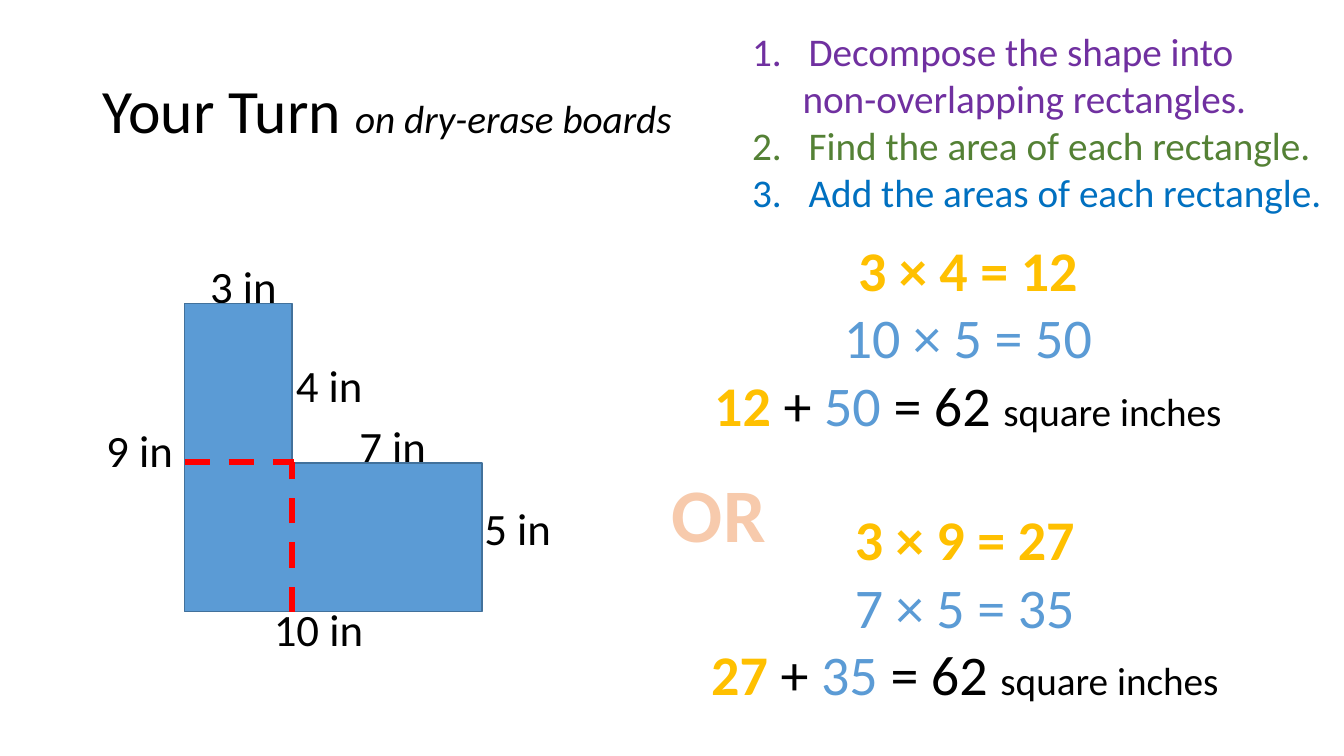
from lxml import etree
from pptx import Presentation
from pptx.dml.color import RGBColor
from pptx.enum import dml, shapes, text
from pptx.oxml import ns
from pptx.util import Inches, Pt

COLORS = {"black": "000000", "purple": "7030A0", "green": "548135", "blue": "0070C0",
          "gold": "FFC000", "sky": "5B9BD5", "outline": "42719B", "red": "FF0000",
          "peach": "F7CAAC"}
FONT = "Calibri"

TITLE = [("Your Turn ", {"size": 44}), ("on dry-erase boards", {"size": 28, "italic": True})]

# text, color, numbered
STEPS = [
    ("Decompose the shape into", "purple", True),
    ("non-overlapping rectangles.", "purple", False),
    ("Find the area of each rectangle.", "green", True),
    ("Add the areas of each rectangle.", "blue", True),
]

# text, left, top, width
SIDE_LABELS = [
    ("3 in", 1.98, 2.52, 0.87),
    ("9 in", 0.95, 4.14, 0.87),
    ("5 in", 4.7, 4.92, 0.87),
    ("7 in", 3.46, 4.11, 0.87),
    ("10 in", 2.61, 5.92, 1.1),
    ("4 in", 2.83, 3.5, 0.87),
]

# left, top, sides of the first rectangle, sides of the second
SOLUTIONS = [(6.96, 2.29, (3, 4), (10, 5)), (6.93, 4.96, (3, 9), (7, 5))]

FIGURE = (1.83, 3.01, 2.95, 3.06)
FOOT_RATIO, STEM_RATIO = 0.5, 0.362
CUT_Y = 4.58


def place(shape, left, top, width, height):
    for name, value in zip(("left", "top", "width", "height"), (left, top, width, height)):
        setattr(shape, name, Inches(value))


def add_run(paragraph, words, size, color="black", **formats):
    run = paragraph.add_run()
    run.text = words
    run.font.color.rgb = RGBColor.from_string(COLORS[color])
    for name, value in {"name": FONT, "size": Pt(size), **formats}.items():
        setattr(run.font, name, value)


def add_lines(slide, box, lines, wrap=True):
    """Add a centred text box; each line is a list of (words, run format)."""
    frame = slide.shapes.add_textbox(*map(Inches, box)).text_frame
    frame.word_wrap = wrap
    for index, runs in enumerate(lines):
        paragraph = frame.add_paragraph() if index else frame.paragraphs[0]
        paragraph.alignment = text.PP_ALIGN.CENTER
        for words, formats in runs:
            add_run(paragraph, words, **formats)


def add_title(slide):
    title = slide.shapes.title
    place(title, 0.92, 0.4, 11.5, 1.45)
    title.text_frame.vertical_anchor = text.MSO_ANCHOR.MIDDLE
    title.text_frame.auto_size = text.MSO_AUTO_SIZE.NONE
    paragraph = title.text_frame.paragraphs[0]
    paragraph.alignment = text.PP_ALIGN.LEFT
    paragraph.line_spacing = 0.9
    for words, formats in TITLE:
        add_run(paragraph, words, **formats)


def add_steps(slide):
    body = slide.placeholders[1]
    place(body, 7.36, 0.22, 5.91, 1.99)
    frame = body.text_frame
    frame.auto_size = text.MSO_AUTO_SIZE.NONE
    for index, (words, color, numbered) in enumerate(STEPS):
        paragraph = frame.add_paragraph() if index else frame.paragraphs[0]
        paragraph.level = 0 if numbered else 1
        paragraph.space_before = Pt(0)
        add_run(paragraph, words, 28, color)
        properties = paragraph._p.get_or_add_pPr()
        margin, indent = (0.56, -0.56) if numbered else (0.5, 0)
        properties.set("marL", str(Inches(margin)))
        properties.set("indent", str(Inches(indent)))
        if numbered:
            bullet_color = etree.SubElement(properties, ns.qn("a:buClr"))
            etree.SubElement(bullet_color, ns.qn("a:srgbClr"), val=COLORS[color])
            bullet_font = etree.SubElement(properties, ns.qn("a:buFont"))
            bullet_font.set("typeface", FONT)
            etree.SubElement(properties, ns.qn("a:buAutoNum"), type="arabicPeriod")
        else:
            etree.SubElement(properties, ns.qn("a:buNone"))


def add_solution(slide, left, top, first, second):
    gold = {"size": 40, "color": "gold", "bold": True}
    sky = {"size": 40, "color": "sky"}
    black = {"size": 40}
    areas = [a * b for a, b in (first, second)]
    products = [[(f"{a} × {b} = {a * b}", formats)]
                for (a, b), formats in ((first, gold), (second, sky))]
    total = [(f"{areas[0]} ", gold), ("+ ", black), (f"{areas[1]} ", sky),
             (f"= {sum(areas)} ", black), ("square inches", {"size": 28})]
    add_lines(slide, (left, top, 5.28, 2.12), products + [total])


def add_figure(slide):
    figure = slide.shapes.add_shape(shapes.MSO_SHAPE.CORNER, *map(Inches, FIGURE))
    figure.shadow.inherit = False
    figure.adjustments[0], figure.adjustments[1] = FOOT_RATIO, STEM_RATIO
    figure.fill.solid()
    figure.fill.fore_color.rgb = RGBColor.from_string(COLORS["sky"])
    figure.line.color.rgb = RGBColor.from_string(COLORS["outline"])
    figure.line.width = Pt(1)


def add_cut(slide, *ends):
    cut = slide.shapes.add_connector(shapes.MSO_CONNECTOR.STRAIGHT, *map(Inches, ends))
    cut.line.color.rgb = RGBColor.from_string(COLORS["red"])
    cut.line.width = Pt(4.5)
    cut.line.dash_style = dml.MSO_LINE.DASH
    etree.SubElement(cut._element.spPr, ns.qn("a:effectLst"))


def main():
    presentation = Presentation()
    presentation.slide_width, presentation.slide_height = Inches(13.33), Inches(7.5)
    slide = presentation.slides.add_slide(presentation.slide_layouts[1])
    add_title(slide)
    add_steps(slide)
    for words, left, top, width in SIDE_LABELS:
        add_lines(slide, (left, top, width, 0.64), [[(words, {"size": 32})]], wrap=False)
    add_figure(slide)
    left, top, width, height = FIGURE
    stem_right = left + STEM_RATIO * min(width, height)
    add_cut(slide, stem_right, top + height, stem_right, CUT_Y)
    add_cut(slide, left, CUT_Y, stem_right + 0.02, CUT_Y)
    for solution in SOLUTIONS:
        add_solution(slide, *solution)
    add_lines(slide, (6.56, 4.58, 1.14, 1.01),
              [[("OR", {"size": 54, "color": "peach", "bold": True})]], wrap=False)
    presentation.save("out.pptx")


if __name__ == "__main__":
    main()
